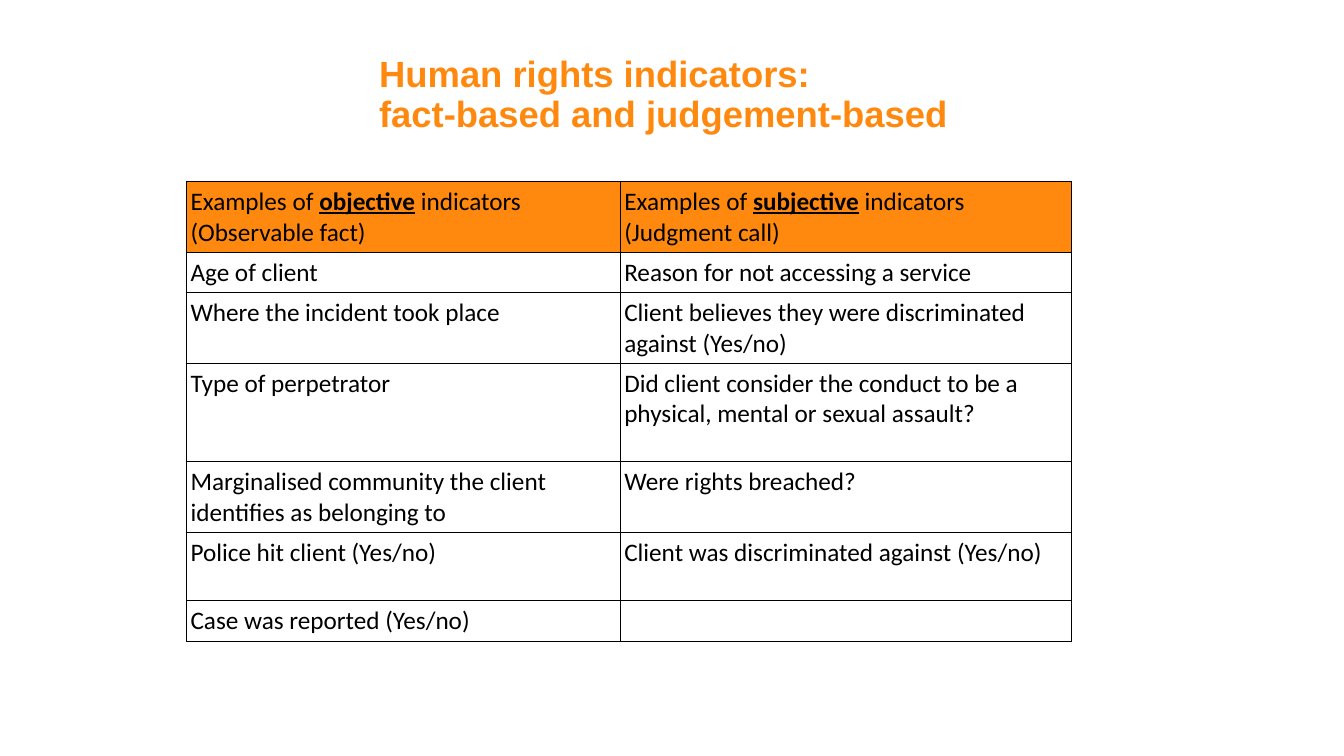
from dataclasses import dataclass

from lxml import etree
from pptx import Presentation
from pptx import util as u
from pptx.dml.color import RGBColor
from pptx.enum import text
from pptx.oxml.ns import qn


@dataclass(frozen=True)
class Theme:
    accent: str = "FF890E"
    ink: str = "000000"
    title_font: str = "Arial"
    body_font: str = "Calibri"
    title_size: float = 26
    body_size: float = 18
    border: float = 0.8


THEME = Theme()
WIDTH, HEIGHT = 13.33, 7.5
TITLE_BOX = (3.76, 0.47, 5.82, 1.34)
TABLE_BOX = (1.85, 1.8, 8.78, 4.55)
COLUMN_SHARES = (0.49, 0.51)
ROW_HEIGHTS = (0.68, 0.39, 0.68, 0.98, 0.68, 0.68, 0.39)

HEADINGS = (("objective", "(Observable fact)"), ("subjective", "(Judgment call)"))
INDICATORS = (
    ("Age of client", "Reason for not accessing a service"),
    ("Where the incident took place",
     "Client believes they were discriminated against (Yes/no)"),
    ("Type of perpetrator",
     "Did client consider the conduct to be a physical, mental or sexual assault?"),
    ("Marginalised community the client identifies as belonging to",
     "Were rights breached?"),
    ("Police hit client (Yes/no)", "Client was discriminated against (Yes/no)"),
    ("Case was reported (Yes/no)", ""),
)


def add_span(para, words, *, size=THEME.body_size, font=THEME.body_font,
             color=THEME.ink, bold=False, underline=False):
    span = para.add_run()
    span.text = words
    span.font.size = u.Pt(size)
    span.font.name = font
    span.font.color.rgb = RGBColor.from_string(color)
    span.font.bold = bold
    span.font.underline = underline


def add_title(page, box, lines):
    frame = page.shapes.add_textbox(*map(u.Inches, box)).text_frame
    frame.word_wrap = True
    frame.vertical_anchor = text.MSO_ANCHOR.TOP
    frame.margin_left = frame.margin_right = frame.margin_bottom = 0
    frame.margin_top = u.Inches(0.09)
    para = frame.paragraphs[0]
    para.line_spacing = 0.9
    for index, line in enumerate(lines):
        if index:
            para.add_line_break()
        add_span(para, line, size=THEME.title_size, font=THEME.title_font,
                 color=THEME.accent, bold=True)


def add_borders(cell):
    properties = cell._tc.get_or_add_tcPr()
    for position, side in enumerate(("lnL", "lnR", "lnT", "lnB")):
        line = etree.Element(qn(f"a:{side}"), w=str(u.Pt(THEME.border)))
        fill = etree.SubElement(line, qn("a:solidFill"))
        etree.SubElement(fill, qn("a:srgbClr"), val=THEME.ink)
        properties.insert(position, line)


def format_cell(cell, fill=None):
    cell.margin_left = cell.margin_right = u.Inches(0.04)
    cell.margin_top = cell.margin_bottom = u.Inches(0.05)
    if fill:
        cell.fill.solid()
        cell.fill.fore_color.rgb = RGBColor.from_string(fill)
    else:
        cell.fill.background()
    add_borders(cell)


def add_indicator_table(page, box):
    table = page.shapes.add_table(
        len(ROW_HEIGHTS), len(COLUMN_SHARES), *map(u.Inches, box)).table
    table.first_row = table.horz_banding = False
    for column, share in zip(table.columns, COLUMN_SHARES):
        column.width = u.Inches(box[2] * share)
    for row, height in zip(table.rows, ROW_HEIGHTS):
        row.height = u.Inches(height)
    for column, (kind, meaning) in enumerate(HEADINGS):
        cell = table.cell(0, column)
        format_cell(cell, THEME.accent)
        para = cell.text_frame.paragraphs[0]
        add_span(para, "Examples of ")
        add_span(para, kind, bold=True, underline=True)
        add_span(para, " indicators")
        add_span(cell.text_frame.add_paragraph(), meaning)
    for row, pair in enumerate(INDICATORS, 1):
        for column, words in enumerate(pair):
            cell = table.cell(row, column)
            format_cell(cell)
            if words:
                add_span(cell.text_frame.paragraphs[0], words)


def main():
    deck = Presentation()
    deck.slide_width, deck.slide_height = u.Inches(WIDTH), u.Inches(HEIGHT)
    page = deck.slides.add_slide(deck.slide_layouts[6])
    add_title(page, TITLE_BOX,
              ("Human rights indicators:", "fact-based and judgement-based"))
    add_indicator_table(page, TABLE_BOX)
    deck.save("out.pptx")


if __name__ == "__main__":
    main()
